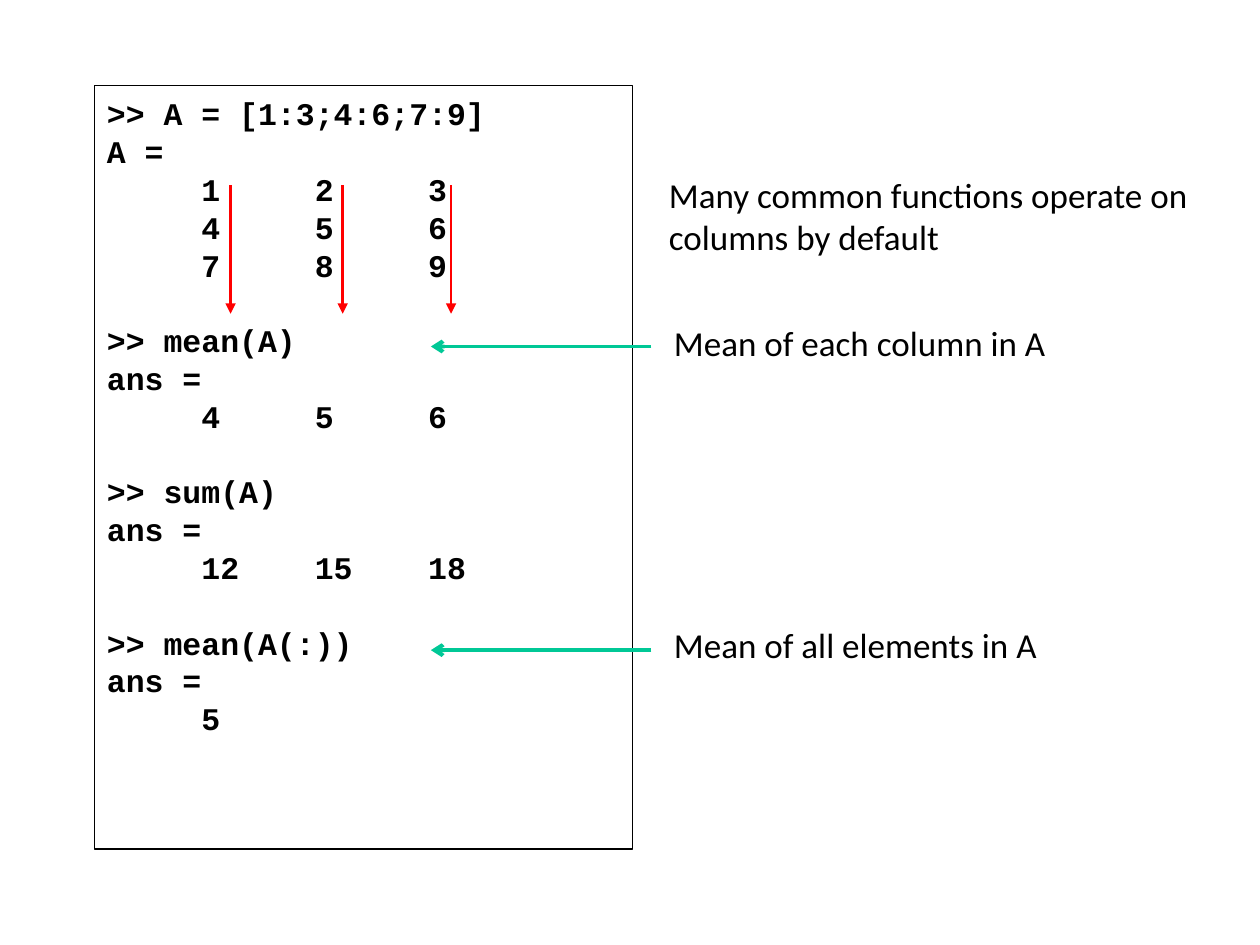
from dataclasses import dataclass

from lxml import etree
from pptx import Presentation
from pptx.dml.color import RGBColor
from pptx.enum import shapes, text
from pptx.oxml import ns
from pptx.util import Inches, Pt


@dataclass(frozen=True)
class Theme:
    black: RGBColor = RGBColor(0, 0, 0)
    white: RGBColor = RGBColor(255, 255, 255)
    red: RGBColor = RGBColor(255, 0, 0)
    green: RGBColor = RGBColor(0, 0xC8, 0x96)
    code_font: str = "Courier New"
    note_font: str = "Calibri"
    code_size: Pt = Pt(18)
    code_pitch: Pt = Pt(21.6)
    note_size: Pt = Pt(20)


THEME = Theme()

CODE_BLOCKS = [
    [">> A = [1:3;4:6;7:9]", "A =", "     1     2     3", "     4     5     6", "     7     8     9"],
    [">> mean(A)", "ans =", "     4     5     6"],
    [">> sum(A)", "ans =", "     12    15    18"],
    [">> mean(A(:))", "ans =", "     5"],
]

NOTES = [
    ("Many common functions operate on columns by default", 5.21, 1.33, 0.77),
    ("Mean of each column in A", 5.25, 2.5, 0.44),
    ("Mean of all elements in A", 5.25, 4.9, 0.44),
]


def format_font(font, name, size, bold=False):
    font.name = name
    font.size = size
    font.bold = bold
    font.color.rgb = THEME.black


def add_code_panel(slide, blocks, left, top, width, height):
    """Add a framed listing with one empty line's height between blocks."""
    panel = slide.shapes.add_shape(
        shapes.MSO_SHAPE.RECTANGLE, Inches(left), Inches(top), Inches(width), Inches(height))
    panel.shadow.inherit = False
    panel.fill.solid()
    panel.fill.fore_color.rgb = THEME.white
    panel.line.color.rgb = THEME.black
    panel.line.width = Pt(0.75)
    frame = panel.text_frame
    frame.word_wrap = True
    frame.vertical_anchor = text.MSO_ANCHOR.TOP
    frame.margin_top = Inches(0.07)
    frame.text = "\n".join(line for block in blocks for line in block)
    paragraphs = iter(frame.paragraphs)
    for block_index, block in enumerate(blocks):
        for line_index in range(len(block)):
            paragraph = next(paragraphs)
            paragraph.alignment = text.PP_ALIGN.LEFT
            paragraph.line_spacing = THEME.code_pitch
            if block_index and line_index == 0:
                paragraph.space_before = THEME.code_pitch
            format_font(paragraph.runs[0].font, THEME.code_font, THEME.code_size, bold=True)


def add_note(slide, wording, left, top, height):
    box = slide.shapes.add_textbox(Inches(left), Inches(top), Inches(4.35), Inches(height))
    frame = box.text_frame
    frame.word_wrap = True
    frame.auto_size = text.MSO_AUTO_SIZE.SHAPE_TO_FIT_TEXT
    frame.text = wording
    format_font(frame.paragraphs[0].runs[0].font, THEME.note_font, THEME.note_size)


def add_arrow(slide, start, end, color, width, head):
    points = [Inches(value) for value in (*start, *end)]
    arrow = slide.shapes.add_connector(shapes.MSO_CONNECTOR.STRAIGHT, *points)
    arrow.line.color.rgb = color
    arrow.line.width = Pt(width)
    etree.SubElement(arrow.line._get_or_add_ln(), ns.qn("a:tailEnd"), type=head)
    etree.SubElement(arrow._element.spPr, ns.qn("a:effectLst"))


def main():
    presentation = Presentation()
    presentation.slide_width = Inches(10)
    presentation.slide_height = Inches(7.5)
    slide = presentation.slides.add_slide(presentation.slide_layouts.get_by_name("Blank"))

    add_code_panel(slide, CODE_BLOCKS, 0.75, 0.68, 4.27, 6.06)
    for column in (1.83, 2.72, 3.58):
        add_arrow(slide, (column, 1.47), (column, 2.49), THEME.red, 1.5, "triangle")
    for note in NOTES:
        add_note(slide, *note)
    for row in (2.75, 5.16):
        add_arrow(slide, (5.17, row), (3.42, row), THEME.green, 2.25, "arrow")

    presentation.save("out.pptx")


if __name__ == "__main__":
    main()
